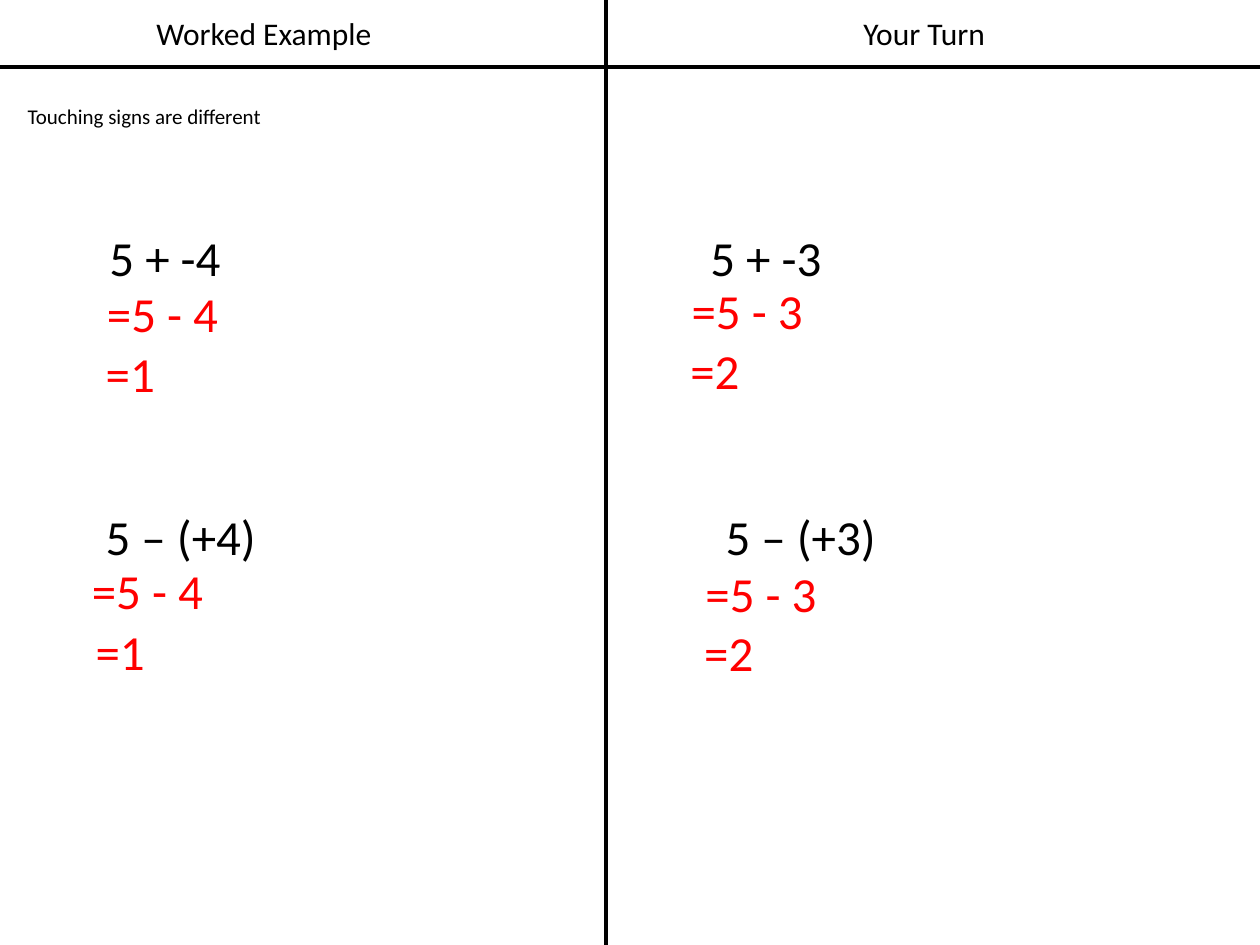
from pptx import Presentation
from pptx.dml.color import RGBColor
from pptx.enum.shapes import MSO_CONNECTOR
from pptx.enum.text import MSO_AUTO_SIZE, PP_ALIGN
from pptx.oxml.ns import qn
from pptx.util import Inches, Pt
from lxml.etree import SubElement

COLS, ROWS = 100, 75
DIVIDER_COL, HEADER_ROW = 48.1, 5.3
STEP_W, STEP_H = 15.2, 5.7
COLORS = {"ink": "000000", "answer": "FF0000"}
HEADING = {"size": 18, "align": PP_ALIGN.CENTER}
NOTE = {"size": 12}
QUESTION = {"size": 28}
ANSWER = {"size": 28, "color": "answer"}

PANELS = [
    {"heading": ("Worked Example", 11.3),
     "note": "Touching signs are different",
     "workings": [
         ((7.7, 17.6, STEP_W), [("5 + -4", 0, 0), ("=5 - 4", -0.2, 4.4), ("=1", -0.3, 9.2)]),
         ((7.4, 39.7, STEP_W), [("5 – (+4)", 0, 0), ("=5 - 4", -1.1, 4.3), ("=1", -0.8, 9.1)])]},
    {"heading": ("Your Turn", 15.6),
     "workings": [
         ((7.3, 17.6, 11), [("5 + -3", 0, 0), ("=5 - 3", -1.5, 4.2), ("=2", -1.6, 8.9)]),
         ((8.5, 39.7, 14.1), [("5 – (+3)", 0, 0), ("=5 - 3", -1.6, 4.5), ("=2", -1.7, 9.2)])]},
]


def grid(prs, x, y):
    """Turn a column and a row into slide lengths."""
    return round(prs.slide_width * x / COLS), round(prs.slide_height * y / ROWS)


def add_text(prs, s, box, text, size, color="ink", align=PP_ALIGN.LEFT, wrap=True):
    """Place one line of text in a box given in columns and rows."""
    x, y, w, h = box
    tf = s.shapes.add_textbox(*grid(prs, x, y), *grid(prs, w, h)).text_frame
    tf.word_wrap = wrap
    tf.auto_size = MSO_AUTO_SIZE.SHAPE_TO_FIT_TEXT
    p = tf.paragraphs[0]
    p.alignment = align
    r = p.add_run()
    r.text = text
    for name, value in {"name": "Calibri", "size": Pt(size)}.items():
        setattr(r.font, name, value)
    r.font.color.rgb = RGBColor.from_string(COLORS[color])


def add_rule(prs, s, start, end):
    """Draw a dividing line between two grid points."""
    line = s.shapes.add_connector(MSO_CONNECTOR.STRAIGHT, *grid(prs, *start), *grid(prs, *end))
    line.line.width = Pt(2.5)
    line.line.color.rgb = RGBColor.from_string(COLORS["ink"])
    SubElement(line._element.spPr, qn("a:effectLst"))


def add_working(prs, s, box, steps):
    """Set a question and its answer steps relative to the question's box."""
    x, y, question_w = box
    for i, (text, dx, dy) in enumerate(steps):
        w = STEP_W if i else question_w
        style = ANSWER if i else QUESTION
        add_text(prs, s, (x + dx, y + dy, w, STEP_H), text, wrap=w == STEP_W, **style)


def add_panel(prs, s, left, panel):
    """Fill one half of the slide from its left column."""
    heading, x = panel["heading"]
    add_text(prs, s, (left + x, 0.6, 19.3, 4), heading, **HEADING)
    if "note" in panel:
        add_text(prs, s, (left + 1.2, 7.7, 37.5, 3), panel["note"], **NOTE)
    for (x, y, w), steps in panel["workings"]:
        add_working(prs, s, (left + x, y, w), steps)


def main():
    """Build the two-panel slide and save it."""
    prs = Presentation()
    prs.slide_width, prs.slide_height = Inches(10), Inches(7.5)
    s = prs.slides.add_slide(prs.slide_layouts[6])
    add_rule(prs, s, (DIVIDER_COL, 0), (DIVIDER_COL, ROWS))
    add_rule(prs, s, (0, HEADER_ROW), (COLS, HEADER_ROW))
    for left, panel in zip((0, DIVIDER_COL), PANELS):
        add_panel(prs, s, left, panel)
    prs.save("out.pptx")


if __name__ == "__main__":
    main()
